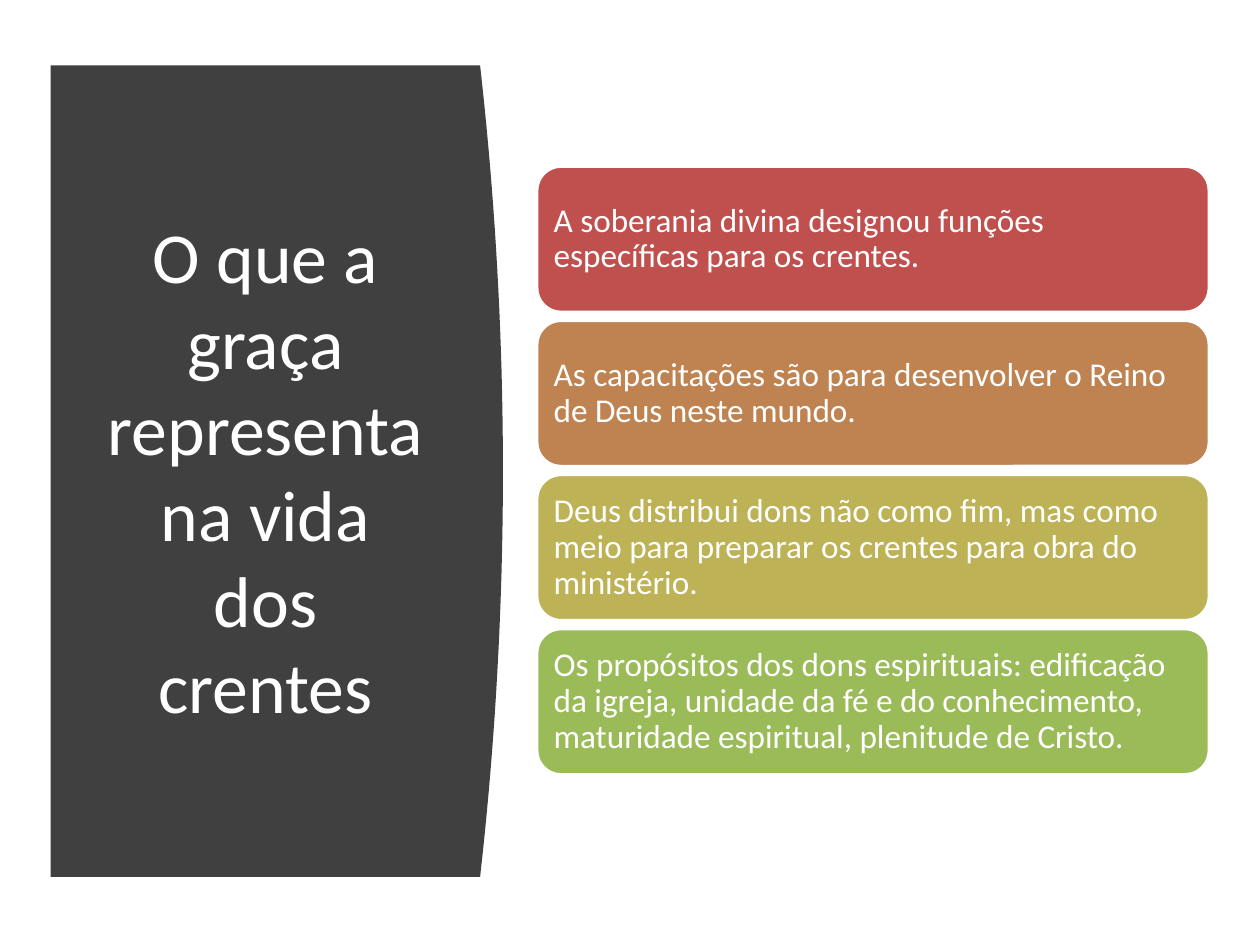
from pptx import Presentation
from pptx.dml.color import RGBColor
from pptx.enum.shapes import MSO_SHAPE as Shape
from pptx.enum.text import MSO_ANCHOR as Anchor, PP_ALIGN as Align
from pptx.util import Cm, Pt

WHITE = RGBColor(0xFF, 0xFF, 0xFF)
CHARCOAL = RGBColor(0x40, 0x40, 0x40)
RED = RGBColor(0xC0, 0x50, 0x4D)
ORANGE = RGBColor(0xBE, 0x83, 0x51)
OLIVE = RGBColor(0xBD, 0xB2, 0x55)
GREEN = RGBColor(0x9B, 0xBB, 0x59)

TITLE = "O que a graça representa na vida dos crentes"
CARDS = [
    ("A soberania divina designou funções específicas para os crentes.", RED),
    ("As capacitações são para desenvolver o Reino de Deus neste mundo.", ORANGE),
    ("Deus distribui dons não como fim, mas como meio para preparar "
     "os crentes para obra do ministério.", OLIVE),
    ("Os propósitos dos dons espirituais: edificação da igreja, unidade da fé "
     "e do conhecimento, maturidade espiritual, plenitude de Cristo.", GREEN),
]


def write(tf, text, size, align):
    tf.word_wrap = True
    tf.vertical_anchor = Anchor.MIDDLE
    p = tf.paragraphs[0]
    p.text = text
    p.alignment = align
    p.font.name = "Calibri"
    p.font.size = Pt(size)
    p.font.color.rgb = WHITE
    return p


def add_title_panel(slide, left, top, width, height):
    """Dark panel whose right edge bulges along a parabola, with the title."""
    bulge, steps = Cm(0.46), 40
    edge = []
    for i in range(steps + 1):
        t = i / steps
        x = left + width - bulge * (2 * t - 1) ** 2
        edge.append((round(x), round(top + height * t)))
    builder = slide.shapes.build_freeform(left, top)
    builder.add_line_segments(edge + [(left, top + height)], close=True)
    sp = builder.convert_to_shape()
    sp.shadow.inherit = False
    sp.fill.solid()
    sp.fill.fore_color.rgb = CHARCOAL
    sp.line.fill.background()

    box = slide.shapes.add_textbox(left + Cm(0.78), top + Cm(1.5),
                                   width - Cm(2.01), height - Cm(3.05))
    write(box.text_frame, TITLE, 41, Align.CENTER)


def add_cards(slide, left, top, width, height):
    """Equal rounded cards stacked to fill the box."""
    gap = Cm(0.16)
    card_height = (height - gap * (len(CARDS) - 1)) // len(CARDS)
    for i, (text, color) in enumerate(CARDS):
        sp = slide.shapes.add_shape(Shape.ROUNDED_RECTANGLE, left,
                                    top + i * (card_height + gap),
                                    width, card_height)
        sp.shadow.inherit = False
        sp.fill.solid()
        sp.fill.fore_color.rgb = color
        sp.line.color.rgb = WHITE
        sp.line.width = Pt(2)
        tf = sp.text_frame
        tf.margin_left = tf.margin_right = Cm(0.2)
        tf.margin_top = tf.margin_bottom = Cm(0.2)
        p = write(tf, text, 19, Align.LEFT)
        p.line_spacing = 0.9


def main():
    prs = Presentation()
    prs.slide_width, prs.slide_height = Cm(25.4), Cm(19.05)
    slide = prs.slides.add_slide(prs.slide_layouts[6])
    add_title_panel(slide, Cm(1.02), Cm(1.32), Cm(9.12), Cm(16.36))
    add_cards(slide, Cm(10.82), Cm(3.35), Cm(13.56), Cm(12.27))
    prs.save("out.pptx")


if __name__ == "__main__":
    main()
